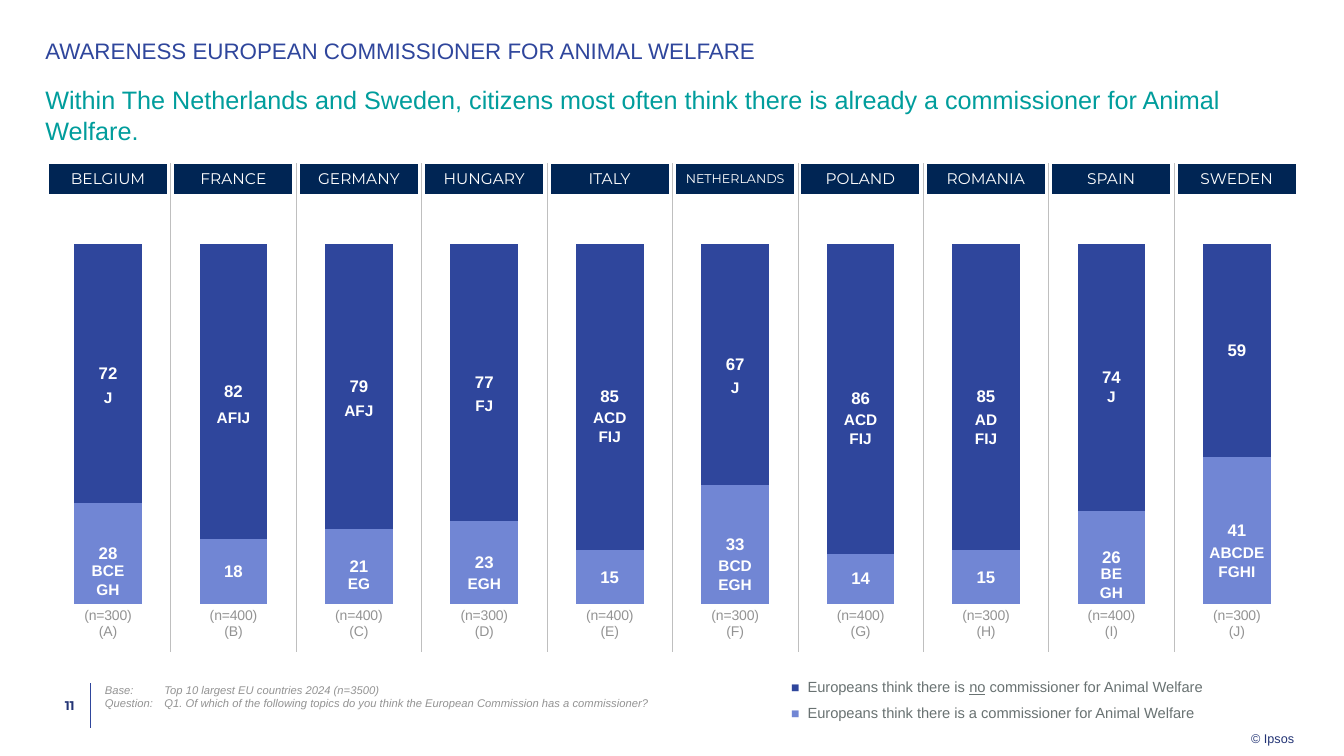
"""Builds the slide on awareness of a European Commissioner for Animal Welfare."""
from lxml import etree
from pptx import Presentation
from pptx.chart.data import CategoryChartData
from pptx.dml.color import RGBColor
from pptx.enum.chart import XL_CHART_TYPE, XL_LABEL_POSITION, XL_TICK_LABEL_POSITION, XL_TICK_MARK
from pptx.enum.shapes import MSO_CONNECTOR
from pptx.enum.text import MSO_ANCHOR, PP_ALIGN
from pptx.oxml import parse_xml
from pptx.oxml.ns import nsdecls, qn
from pptx.util import Inches, Pt

LEFT, CENTER, RIGHT = PP_ALIGN.LEFT, PP_ALIGN.CENTER, PP_ALIGN.RIGHT
TOP, MIDDLE = MSO_ANCHOR.TOP, MSO_ANCHOR.MIDDLE
STRAIGHT = MSO_CONNECTOR.STRAIGHT
NO_TICK = XL_TICK_MARK.NONE

COLORS = {
    "blue": "2F469C", "light": "7186D4", "navy": "002554", "teal": "009D9C",
    "ink": "233475", "white": "FFFFFF", "gray": "939393", "legend": "697272",
    "rule": "BFBFBF", "text": "282828",
}
RGB = {name: RGBColor.from_string(value) for name, value in COLORS.items()}
MARGIN, WIDTH = 0.45, 12.44
COUNTRIES = ["BELGIUM", "FRANCE", "GERMANY", "HUNGARY", "ITALY",
             "NETHERLANDS", "POLAND", "ROMANIA", "SPAIN", "SWEDEN"]
SAMPLES = [300, 400, 400, 300, 400, 300, 400, 300, 400, 300]
AWARE = [28, 18, 21, 23, 15, 33, 14, 15, 26, 41]
COL = WIDTH / len(COUNTRIES)
BAR = 0.67


def style(p, size, color, font="Arial", bold=False, italic=False, align=LEFT):
    """Sets the alignment and font of a paragraph."""
    p.alignment = align
    f = p.font
    f.name, f.size, f.bold, f.italic = font, Pt(size), bold, italic
    f.color.rgb = RGB[color]


def add_text(box, lines, size, color, right=0, anchor=TOP, wrap=True, **look):
    """Adds a text box with one paragraph for each line."""
    tf = s.shapes.add_textbox(*map(Inches, box)).text_frame
    tf.word_wrap, tf.vertical_anchor = wrap, anchor
    tf.margin_left = tf.margin_top = tf.margin_bottom = 0
    tf.margin_right = Inches(right)
    tf.text = "\n".join(lines)
    for p in tf.paragraphs:
        style(p, size, color, **look)
    return tf


prs = Presentation()
prs.slide_width, prs.slide_height = Inches(13.33), Inches(7.5)
s = prs.slides.add_slide(prs.slide_layouts[6])

add_text((MARGIN, 0.84, WIDTH, 0.79),
         ["Within The Netherlands and Sweden, citizens most often think there is "
          "already a commissioner for Animal Welfare."], 18, "teal")
title = add_text((MARGIN, 0.4, WIDTH, 0.42),
                 ["AWARENESS EUROPEAN COMMISSIONER FOR ANIMAL WELFARE"], 16, "blue")
title.paragraphs[0].line_spacing = 0.9

data = CategoryChartData()
data.categories = [f"(n={n})\n({letter})" for n, letter in zip(SAMPLES, "ABCDEFGHIJ")]
data.add_series("There is a commissioner", AWARE)
data.add_series("There is no commissioner", [100 - value for value in AWARE])
chart = s.shapes.add_chart(XL_CHART_TYPE.COLUMN_STACKED, Inches(MARGIN), Inches(2.42),
                           Inches(WIDTH), Inches(4.05), data).chart
chart.has_legend = chart.has_title = False
chart.font.name, chart.font.size = "Arial", Pt(10)
chart.font.color.rgb = RGB["text"]
plot = chart.plots[0]
plot.gap_width, plot.overlap, plot.vary_by_categories = 85, 100, False
for series, color in zip(plot.series, ("light", "blue")):
    series.format.fill.solid()
    series.format.fill.fore_color.rgb = RGB[color]
    labels = series.data_labels
    labels.show_value, labels.position = True, XL_LABEL_POSITION.CENTER
    labels.number_format, labels.number_format_is_linked = "0;0;", False
    labels.font.name, labels.font.size, labels.font.bold = "Arial", Pt(12), True
    labels.font.color.rgb = RGB["white"]
for axis in (chart.category_axis, chart.value_axis):
    axis.major_tick_mark = axis.minor_tick_mark = NO_TICK
    axis.has_major_gridlines = False
    axis.format.line.fill.background()
chart.category_axis.tick_labels.font.size = Pt(10)
chart.category_axis.tick_labels.font.color.rgb = RGB["gray"]
chart.value_axis.tick_label_position = XL_TICK_LABEL_POSITION.NONE
chart.value_axis.minimum_scale, chart.value_axis.maximum_scale = 0, 100
plot_area = chart._chartSpace.chart.plotArea
for old in plot_area.findall(qn("c:layout")):
    plot_area.remove(old)
plot_area.insert(0, parse_xml(
    f'<c:layout {nsdecls("c")}><c:manualLayout><c:layoutTarget val="inner"/>'
    '<c:xMode val="edge"/><c:yMode val="edge"/><c:x val="0"/><c:y val="0"/>'
    '<c:w val="1"/><c:h val="0.883"/></c:manualLayout></c:layout>'))

header = s.shapes.add_table(1, len(COUNTRIES), Inches(MARGIN), Inches(1.62),
                            Inches(WIDTH), Inches(0.31)).table
header.first_row = header.horz_banding = False
header.rows[0].height = Inches(0.31)
for i, country in enumerate(COUNTRIES):
    header.columns[i].width = Inches(COL)
    cell = header.cell(0, i)
    cell.margin_left = cell.margin_right = Inches(0.08)
    cell.margin_top = cell.margin_bottom = 0
    cell.vertical_anchor = MIDDLE
    cell.fill.solid()
    cell.fill.fore_color.rgb = RGB["navy"]
    for k, side in enumerate(("lnL", "lnR")):
        cell._tc.get_or_add_tcPr().insert(k, parse_xml(
            f'<a:{side} {nsdecls("a")} w="{Pt(6)}"><a:solidFill>'
            f'<a:srgbClr val="{COLORS["white"]}"/></a:solidFill></a:{side}>'))
    cell.text = country
    style(cell.text_frame.paragraphs[0], 9 if country == "NETHERLANDS" else 11,
          "white", font="Montserrat", align=CENTER)

rules = [(MARGIN + COL * i, 1.62, 6.47, "rule") for i in range(1, len(COUNTRIES))]
for x, top, bottom, color in rules + [(0.9, 6.78, 7.22, "blue")]:
    line = s.shapes.add_connector(STRAIGHT, Inches(x), Inches(top), Inches(x), Inches(bottom))
    line.line.color.rgb, line.line.width = RGB[color], Pt(0.5)
    etree.SubElement(line._element.spPr, qn("a:effectLst"))

SIGNIFICANCE = [
    (0, 3.85, "J"), (1, 4.04, "AFIJ"), (2, 3.98, "AFJ"), (3, 3.93, "FJ"),
    (4, 4.05, "ACD FIJ"), (5, 3.75, "J"), (6, 4.07, "ACD FIJ"), (7, 4.07, "AD FIJ"),
    (8, 3.84, "J"), (0, 5.57, "BCE GH"), (2, 5.69, "EG"), (3, 5.69, "EGH"),
    (5, 5.52, "BCD EGH"), (8, 5.6, "BE GH"), (9, 5.39, "ABCDE FGHI"),
]
for i, top, letters in SIGNIFICANCE:
    lines = letters.split()
    left = MARGIN + COL * (i + 0.5) - BAR / 2
    add_text((left, top, BAR, 0.01 + 0.18 * len(lines)), lines, 11, "white",
             anchor=MIDDLE, bold=True, align=CENTER)

notes = add_text((1.04, 6.78, 6.6, 0.43),
                 ["Base:\tTop 10 largest EU countries 2024 (n=3500)",
                  "Question:\tQ1. Of which of the following topics do you think "
                  "the European Commission has a commissioner?"], 8, "gray", italic=True)
for p in notes.paragraphs:
    p._p.get_or_add_pPr().insert(0, parse_xml(
        f'<a:tabLst {nsdecls("a")}><a:tab pos="{Inches(0.59)}" algn="l"/></a:tabLst>'))

LEGEND = [
    ("blue", ["Europeans think there is ", "no", " commissioner for Animal Welfare"]),
    ("light", ["Europeans think there is a commissioner for Animal Welfare"]),
]
legend = s.shapes.add_table(2, 2, Inches(7.78), Inches(6.69), Inches(4.28), Inches(0.52)).table
legend.first_row = legend.horz_banding = False
legend.columns[0].width, legend.columns[1].width = Inches(0.19), Inches(4.09)
for row, (color, parts) in enumerate(LEGEND):
    legend.rows[row].height = Inches(0.26)
    looks = ((["■"], 10, color, RIGHT), (parts, 10.5, "legend", LEFT))
    for col, (texts, size, ink, align) in enumerate(looks):
        cell = legend.cell(row, col)
        cell.margin_left = cell.margin_right = Inches(0.04)
        cell.margin_top = cell.margin_bottom = 0
        cell.vertical_anchor = MIDDLE
        cell.fill.background()
        p = cell.text_frame.paragraphs[0]
        style(p, size, ink, align=align)
        for text in texts:
            r = p.add_run()
            r.text = text
            if text == "no":
                r.font.underline = True

add_text((MARGIN, 6.78, 0.45, 0.43), ["11"], 9, "ink", right=0.16, anchor=MIDDLE,
         font="Montserrat", bold=True, align=RIGHT)
add_text((12.41, 7.25, 0.43, 0.15), ["© Ipsos"], 9, "ink", wrap=False)

prs.save("out.pptx")
